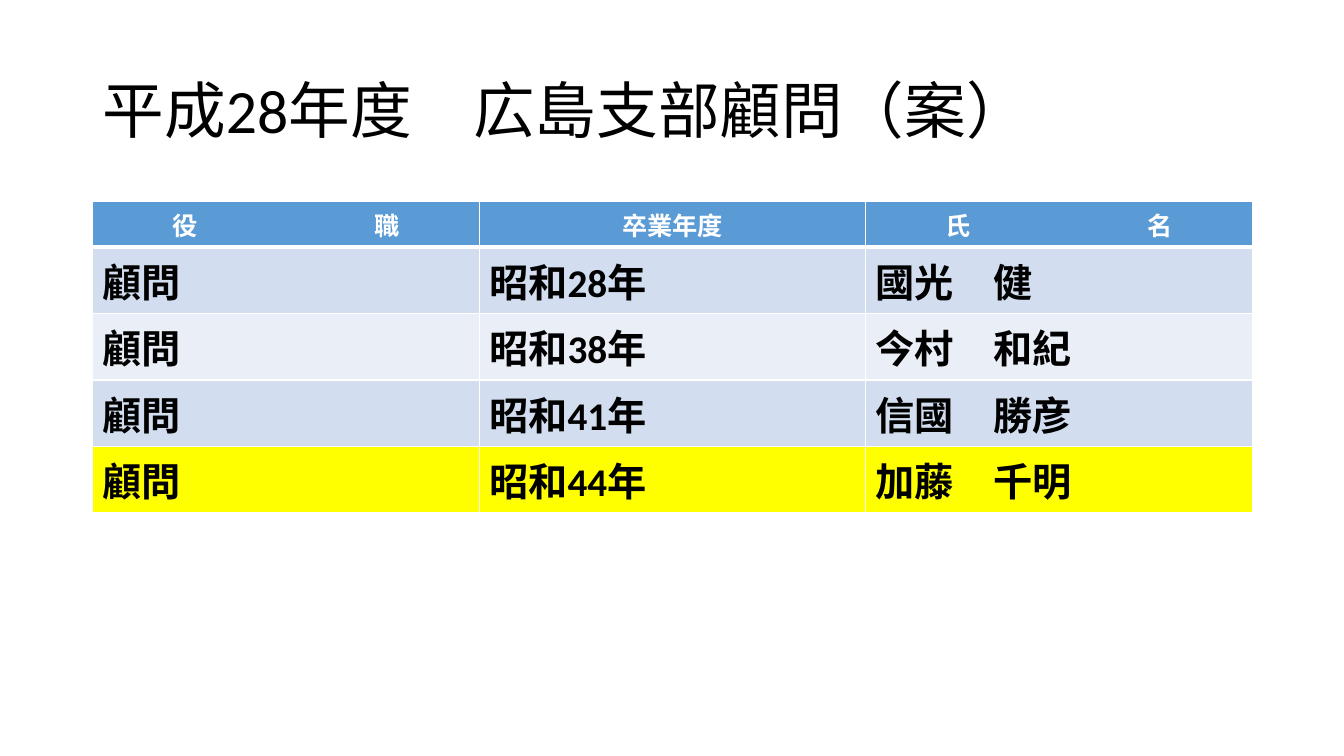
"""Build the slide that lists the proposed branch advisers."""
from lxml import etree
from pptx import Presentation, util as u
from pptx.dml.color import RGBColor
from pptx.enum import text
from pptx.oxml.ns import qn

TITLE = "平成28年度　広島支部顧問（案）"
HEADER = ("役　　　　　　　職", "卒業年度", "氏　　　　　　　名")
ADVISERS = [
    ("顧問", "昭和28年", "國光　健"),
    ("顧問", "昭和38年", "今村　和紀"),
    ("顧問", "昭和41年", "信國　勝彦"),
    ("顧問", "昭和44年", "加藤　千明"),
]
THEME = {
    "font": "Calibri", "ink": "000000", "white": "FFFFFF", "header": "5B9BD5",
    "bands": ("D2DEEF", "EAEFF7"), "highlight": "FFFF00",
    "title_size": 44, "header_size": 18, "body_size": 28,
}
LEFT, WIDTH = 0.92, 11.5
TABLE_TOP, HEADER_H, ROW_H = 2, 0.45, 0.66


def write(tf, content, size, color=THEME["ink"], bold=False, align=None, spacing=None):
    p = tf.paragraphs[0]
    p.alignment = align
    p.line_spacing = spacing
    r = p.add_run()
    r.text = content
    r.font.name = THEME["font"]
    r.font.size = u.Pt(size)
    r.font.bold = bold
    r.font.color.rgb = RGBColor.from_string(color)


def set_borders(cell, top=1, bottom=1):
    tcPr = cell._tc.get_or_add_tcPr()
    for i, (side, width) in enumerate(zip("LRTB", (1, 1, top, bottom))):
        ln = etree.Element(qn(f"a:ln{side}"), w=str(u.Pt(width)))
        fill = etree.SubElement(ln, qn("a:solidFill"))
        etree.SubElement(fill, qn("a:srgbClr"), val=THEME["white"])
        tcPr.insert(i, ln)


def add_title(s):
    sp = s.shapes.add_textbox(u.Inches(LEFT), u.Inches(0.4), u.Inches(WIDTH), u.Inches(1.45))
    tf = sp.text_frame
    tf.word_wrap = True
    tf.vertical_anchor = text.MSO_ANCHOR.MIDDLE
    write(tf, TITLE, THEME["title_size"], spacing=0.9)


def add_advisers(s):
    rows = [HEADER, *ADVISERS]
    height = HEADER_H + ROW_H * len(ADVISERS)
    table = s.shapes.add_table(len(rows), len(HEADER), u.Inches(LEFT), u.Inches(TABLE_TOP),
                               u.Inches(WIDTH), u.Inches(height)).table
    for col in table.columns:
        col.width = u.Inches(WIDTH / len(HEADER))
    for i, row in enumerate(rows):
        table.rows[i].height = u.Inches(ROW_H if i else HEADER_H)
        if i == 0:
            fill = THEME["header"]
            style = dict(size=THEME["header_size"], color=THEME["white"],
                         align=text.PP_ALIGN.CENTER)
        else:
            fill = THEME["highlight"] if i == len(ADVISERS) else THEME["bands"][(i - 1) % 2]
            style = dict(size=THEME["body_size"])
        for j, content in enumerate(row):
            cell = table.cell(i, j)
            cell.fill.solid()
            cell.fill.fore_color.rgb = RGBColor.from_string(fill)
            set_borders(cell, top=3 if i == 1 else 1, bottom=1 if i else 3)
            write(cell.text_frame, content, bold=True, **style)


def main():
    prs = Presentation()
    prs.slide_width, prs.slide_height = u.Inches(13.33), u.Inches(7.5)
    s = prs.slides.add_slide(prs.slide_layouts[6])
    add_title(s)
    add_advisers(s)
    prs.save("out.pptx")


if __name__ == "__main__":
    main()
